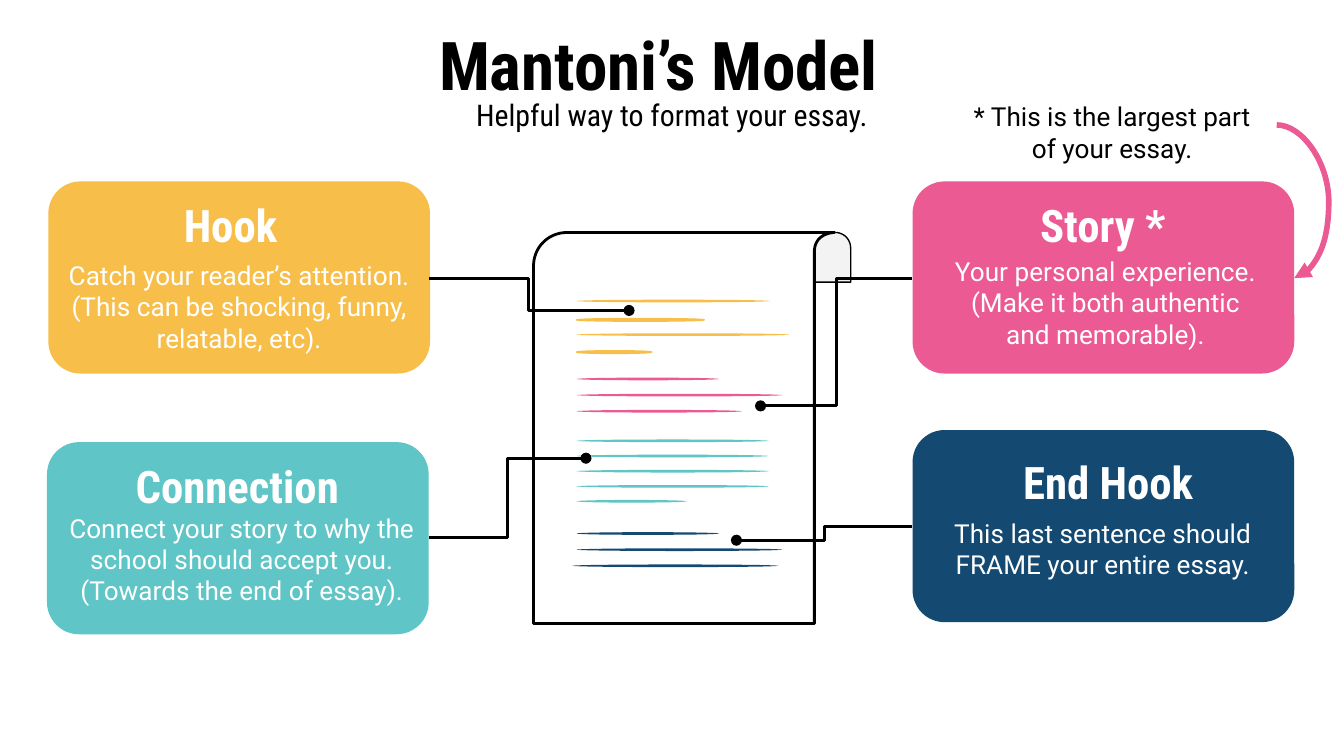
"""Build the essay model slide: four labelled cards around a paper scroll."""
from lxml.etree import SubElement
from pptx import Presentation
from pptx.dml.color import RGBColor
from pptx.enum.shapes import MSO_CONNECTOR as Link, MSO_SHAPE as Preset
from pptx.enum.text import PP_ALIGN as Align
from pptx.oxml.ns import qn
from pptx.util import Inches, Pt

YELLOW, TEAL, PINK, NAVY = "F7BF4A", "5FC5C6", "EB5A93", "144971"
BLACK, WHITE, GREY = "000000", "FFFFFF", "F3F3F3"
HEADING, BODY = "Roboto Condensed", "Roboto"
color = RGBColor.from_string

deck = Presentation()
deck.slide_width = Inches(10)
deck.slide_height = Inches(10) * 9 // 16
page = deck.slides.add_slide(deck.slide_layouts[6])
shapes = page.shapes


def curve(start, pull_a, pull_b, end, steps=16):
    points = []
    for step in range(steps + 1):
        t = step / steps
        weights = ((1 - t) ** 3, 3 * t * (1 - t) ** 2, 3 * t * t * (1 - t), t ** 3)
        corners = (start, pull_a, pull_b, end)
        points.append(tuple(sum(w * c[axis] for w, c in zip(weights, corners)) for axis in (0, 1)))
    return points


def add_text(place, lines, size, font, ink, bold=False):
    box = shapes.add_textbox(*map(Inches, place))
    frame = box.text_frame
    frame.word_wrap = True
    frame.margin_left = frame.margin_right = Inches(0.1)
    frame.margin_top = frame.margin_bottom = Inches(0.1)
    frame.text = lines
    for para in frame.paragraphs:
        para.alignment = Align.CENTER
        para.font.size = Pt(size)
        para.font.name = font
        para.font.bold = bold
        para.font.color.rgb = color(ink)


curl = [
    *curve((6.11, 1.73), (6.03, 1.73), (5.97, 1.79), (5.97, 1.87)),
    (5.97, 2.1), (6.33, 2.1),
    *curve((6.33, 1.85), (6.33, 1.78), (6.28, 1.73), (6.21, 1.73)),
]
sheet = [
    *curve((4.22, 1.73), (4.08, 1.73), (3.97, 1.84), (3.97, 1.98)),
    (3.97, 4.64), (6.06, 4.64),
    *curve((6.06, 1.86), (6.07, 1.73), (6.21, 1.73), (6.21, 1.73)),
]
for outline, fill, weight in ((curl, GREY, 0.75), (sheet, WHITE, 1.5)):
    points = [(Inches(x), Inches(y)) for x, y in outline]
    builder = shapes.build_freeform(*points[0])
    builder.add_line_segments(points[1:], close=True)
    paper = builder.convert_to_shape()
    paper.shadow.inherit = False
    paper.fill.solid()
    paper.fill.fore_color.rgb = color(fill)
    paper.line.color.rgb = color(BLACK)
    paper.line.width = Pt(weight)

strokes = [
    (YELLOW, 4.29, 2.23, 1.44, False), (YELLOW, 4.29, 2.37, 0.95, True),
    (YELLOW, 4.29, 2.48, 1.58, False), (YELLOW, 4.29, 2.61, 0.56, True),
    (PINK, 4.29, 2.81, 1.06, False), (PINK, 4.29, 2.93, 1.53, False),
    (PINK, 4.29, 3.05, 1.23, False),
    *[(TEAL, 4.29, 3.27 + 0.113 * row, 1.43, False) for row in range(4)],
    (TEAL, 4.29, 3.72, 0.82, False),
    (NAVY, 4.29, 3.96, 1.06, False), (NAVY, 4.29, 4.08, 1.53, False),
    (NAVY, 4.26, 4.2, 1.53, False),
]
for ink, left, top, width, outlined in strokes:
    stroke = shapes.add_shape(Preset.OVAL, *map(Inches, (left, top, width, 0.02)))
    stroke.shadow.inherit = False
    stroke.fill.solid()
    stroke.fill.fore_color.rgb = color(ink)
    if outlined:
        stroke.line.color.rgb = color(ink)
        stroke.line.width = Pt(0.75)
    else:
        stroke.line.fill.background()

add_text((0.24, 0.07, 9.32, 0.63), "Mantoni’s Model", 36, HEADING, BLACK, True)
add_text((2.39, 0.62, 5.22, 0.38), "Helpful way to format your essay.", 16, HEADING, BLACK)
add_text((7.05, 0.65, 2.45, 0.55), "* This is the largest part of your essay.", 14, BODY, BLACK)

cards = [
    (YELLOW, (0.36, 1.35), "Hook", (0.49, 1.37, 2.45, 0.38),
     "Catch your reader’s attention. (This can be shocking, funny, relatable, etc).",
     (0.36, 1.83, 2.84, 0.83)),
    (TEAL, (0.35, 3.29), "Connection", (0.54, 3.31, 2.45, 0.49),
     "Connect your story to why the school should accept you.\n(Towards the end of essay).",
     (0.38, 3.71, 2.84, 0.79)),
    (PINK, (6.79, 1.35), "Story *", (6.98, 1.37, 2.45, 0.38),
     "Your personal experience.\n(Make it both authentic and memorable).",
     (7, 1.8, 2.45, 0.77)),
    (NAVY, (6.79, 3.2), "End Hook", (7.02, 3.28, 2.45, 0.52),
     "This last sentence should FRAME your entire essay.",
     (6.98, 3.75, 2.45, 0.6)),
]
for fill, corner, heading, heading_place, body, body_place in cards:
    card = shapes.add_shape(Preset.ROUNDED_RECTANGLE, *map(Inches, (*corner, 2.84, 1.43)))
    card.shadow.inherit = False
    card.fill.solid()
    card.fill.fore_color.rgb = color(fill)
    card.line.fill.background()
    add_text(heading_place, heading, 24, HEADING, WHITE, True)
    add_text(body_place, body, 14, BODY, WHITE)

links = [
    (Link.ELBOW, (3.19, 2.07, 4.68, 2.31), BLACK, 1.5, "oval", 50000),
    (Link.ELBOW, (3.19, 4, 4.36, 3.41), BLACK, 1.5, "oval", 50000),
    (Link.ELBOW, (6.79, 3.92, 5.48, 4.02), BLACK, 1.5, "oval", 50000),
    (Link.ELBOW, (6.79, 2.07, 5.66, 3.02), BLACK, 1.5, "oval", 50000),
    (Link.CURVE, (9.5, 0.93, 9.63, 2.07), PINK, 3, "triangle", 297900),
]
for kind, ends, ink, weight, tip, bend in links:
    link = shapes.add_connector(kind, *map(Inches, ends))
    link.line.color.rgb = color(ink)
    link.line.width = Pt(weight)
    properties = link._element.spPr
    SubElement(properties.find(qn("a:ln")), qn("a:tailEnd"), type=tip)
    SubElement(properties, qn("a:effectLst"))
    guides = properties.find(qn("a:prstGeom")).find(qn("a:avLst"))
    SubElement(guides, qn("a:gd"), name="adj1", fmla=f"val {bend}")

deck.save("out.pptx")
